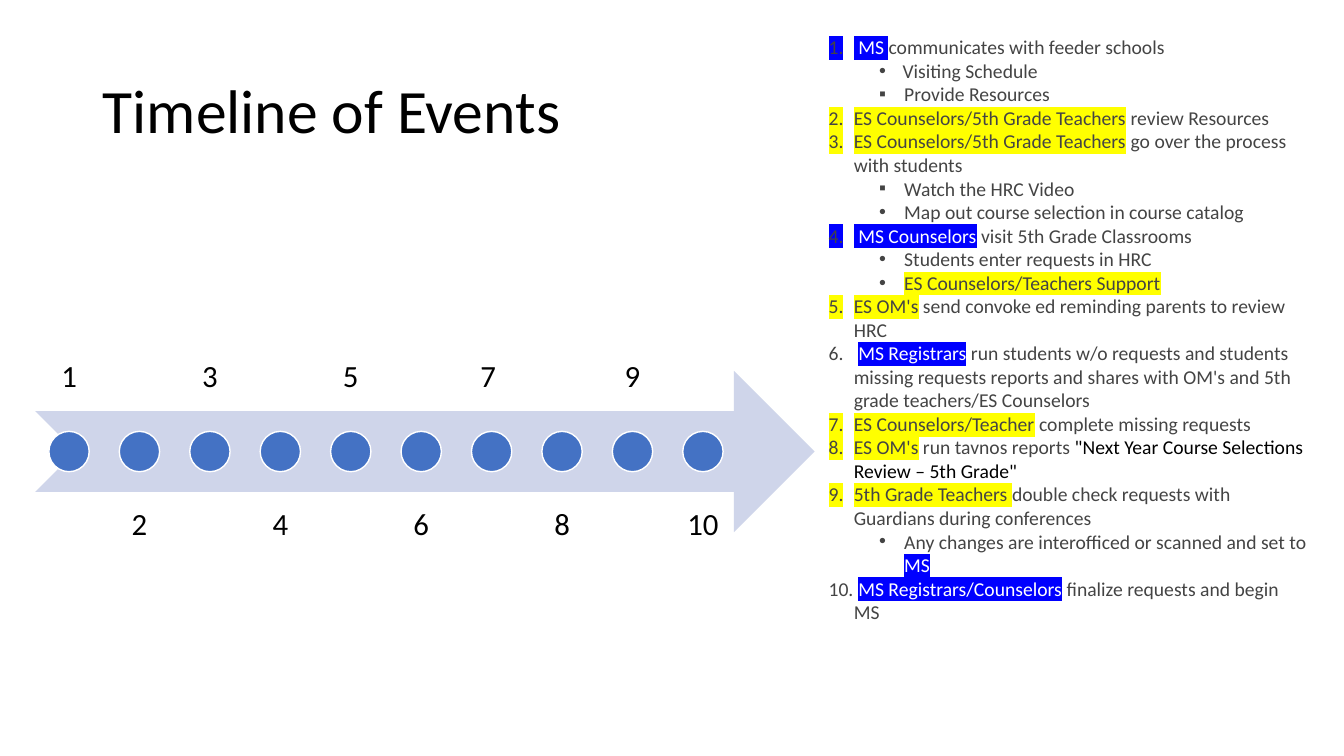
import pptx
import pptx.util
import pptx.dml.color
import pptx.enum.shapes
import pptx.enum.text
import pptx.oxml
import pptx.oxml.ns

Inches = pptx.util.Inches
Pt = pptx.util.Pt
RGBColor = pptx.dml.color.RGBColor
Shape = pptx.enum.shapes.MSO_SHAPE
Anchor = pptx.enum.text.MSO_ANCHOR
Align = pptx.enum.text.PP_ALIGN

BLACK = RGBColor(0x00, 0x00, 0x00)
WHITE = RGBColor(0xFF, 0xFF, 0xFF)
GREY = RGBColor(0x44, 0x44, 0x44)
PALE = RGBColor(0xCF, 0xD5, 0xEA)
BLUE = RGBColor(0x44, 0x72, 0xC4)
VIVID = RGBColor(0x00, 0x00, 0xFF)
YELLOW = RGBColor(0xFF, 0xFF, 0x00)
FONT = "Calibri"

PLAIN = (GREY, None)
DARK = (BLACK, None)
PAD = (GREY, VIVID)
MIDDLE = (WHITE, VIVID)
GRADE = (GREY, YELLOW)

LABELS = ["1", "2", "3", "4", "5", "6", "7 ", "8", "9", "10 "]
STEPS = [
    (0, "", [(" ", PAD), ("MS", MIDDLE), (" ", PAD),
             ("communicates with feeder schools", PLAIN)]),
    (1, "•", [(" Visiting Schedule", PLAIN)]),
    (2, "▪", [("Provide Resources", PLAIN)]),
    (0, "", [("ES Counselors/5th Grade Teachers", GRADE),
             (" review Resources", PLAIN)]),
    (0, "", [("ES Counselors/5th Grade Teachers", GRADE),
             (" go over the process with students", PLAIN)]),
    (2, "▪", [("Watch the HRC Video", PLAIN)]),
    (2, "•", [("Map out course selection in course catalog", PLAIN)]),
    (0, "", [(" ", PAD), ("MS Counselors", MIDDLE),
             (" visit 5th Grade Classrooms", PLAIN)]),
    (2, "•", [("Students enter requests in HRC", PLAIN)]),
    (2, "•", [("ES Counselors/Teachers Support", GRADE)]),
    (0, "", [("ES OM's", GRADE),
             (" send convoke ed reminding parents to review HRC", PLAIN)]),
    (0, "", [(" ", PLAIN), ("MS Registrars", MIDDLE),
             (" run students w/o requests and students missing requests reports "
              "and shares with OM's and 5th grade teachers/ES Counselors", PLAIN)]),
    (0, "", [("ES Counselors/Teacher", GRADE),
             (" complete missing requests ", PLAIN)]),
    (0, "", [("ES OM's", GRADE), (" run tavnos reports ", PLAIN),
             ('"Next Year Course Selections Review – 5th Grade"', DARK)]),
    (0, "", [("5th Grade Teachers ", GRADE),
             ("double check requests with Guardians during conferences", PLAIN)]),
    (1, "•", [("Any changes are interofficed or scanned and set to ", PLAIN),
              ("MS", MIDDLE)]),
    (0, "", [(" ", PLAIN), ("MS Registrars/Counselors", MIDDLE),
             (" finalize requests and begin MS", PLAIN)]),
]


def style(run, size, color, mark=None):
    """Set the font of a run and, if given, its highlight."""
    run.font.name = FONT
    run.font.size = Pt(size)
    run.font.color.rgb = color
    if mark is not None:
        light = pptx.oxml.parse_xml(
            f'<a:highlight {pptx.oxml.ns.nsdecls("a")}>'
            f'<a:srgbClr val="{mark}"/></a:highlight>')
        run._r.get_or_add_rPr().find(pptx.oxml.ns.qn("a:solidFill")).addnext(light)


def bullet(para, sign):
    """Indent a paragraph and give it a sign, or a number when there is none."""
    left, hang = (0.75, 0.25) if sign else (0.25, 0.25)
    if para.level == 1 and para.text.startswith(" "):
        left, hang = 0.69, 0.19
    props = para._p.get_or_add_pPr()
    props.set("marL", str(Inches(left)))
    props.set("indent", str(-Inches(hang)))
    tags = ['buAutoNum type="arabicPeriod"']
    if sign:
        tags = ['buFont typeface="Arial"', f'buChar char="{sign}"']
    for tag in tags:
        props.append(pptx.oxml.parse_xml(
            f'<a:{tag} {pptx.oxml.ns.nsdecls("a")}/>'))


def add_title(slide, left, top, width, height):
    """Place the slide title."""
    title = slide.shapes.title
    title.left, title.top = Inches(left), Inches(top)
    title.width, title.height = Inches(width), Inches(height)
    frame = title.text_frame
    frame.text = "Timeline of Events"
    frame.vertical_anchor = Anchor.MIDDLE
    para = frame.paragraphs[0]
    para.alignment = Align.LEFT
    para.line_spacing = 0.9
    style(para.runs[0], 44, BLACK)


def add_form(group, kind, left, top, width, height, fill):
    """Add a filled shape without shadow or line."""
    form = group.shapes.add_shape(
        kind, Inches(left), Inches(top), Inches(width), Inches(height))
    form.shadow.inherit = False
    form.fill.solid()
    form.fill.fore_color.rgb = fill
    form.line.fill.background()
    return form


def add_label(group, text, left, top, width, height, anchor):
    """Add one number of the timeline."""
    box = group.shapes.add_textbox(
        Inches(left), Inches(top), Inches(width), Inches(height))
    frame = box.text_frame
    frame.word_wrap = True
    frame.vertical_anchor = anchor
    frame.margin_left = frame.margin_right = Inches(0.17)
    frame.margin_top = frame.margin_bottom = Inches(0.17)
    frame.text = text
    para = frame.paragraphs[0]
    para.alignment = Align.CENTER
    para.line_spacing = 0.9
    style(para.runs[0], 22, BLACK)


def add_timeline(slide, left, top, width, height):
    """Draw the arrow with its dots and numbers above and below by turns."""
    group = slide.shapes.add_group_shape()
    band = 0.4 * height
    add_form(group, Shape.NOTCHED_RIGHT_ARROW, left, top + (height - band) / 2,
             width, band, PALE)
    wide, size = 0.67, 0.4
    pitch = (0.9 * width - wide) / (len(LABELS) - 1)
    for num, text in enumerate(LABELS):
        start = left + num * pitch
        if num % 2:
            add_label(group, text, start, top + height - band, wide, band,
                      Anchor.TOP)
        else:
            add_label(group, text, start, top, wide, band, Anchor.BOTTOM)
        dot = add_form(group, Shape.OVAL, start + (wide - size) / 2,
                       top + (height - size) / 2, size, size, BLUE)
        dot.line.color.rgb = WHITE
        dot.line.width = Pt(1)


def add_steps(slide, left, top, width, height):
    """Write the numbered list of steps."""
    box = slide.shapes.add_textbox(
        Inches(left), Inches(top), Inches(width), Inches(height))
    frame = box.text_frame
    frame.word_wrap = True
    frame.auto_size = pptx.enum.text.MSO_AUTO_SIZE.SHAPE_TO_FIT_TEXT
    for num, (level, sign, parts) in enumerate(STEPS):
        para = frame.add_paragraph() if num else frame.paragraphs[0]
        para.level = level
        for text, (color, mark) in parts:
            run = para.add_run()
            run.text = text
            style(run, 14, color, mark)
        bullet(para, sign)


def main():
    """Build and save the slide."""
    deck = pptx.Presentation()
    deck.slide_width, deck.slide_height = Inches(13.33), Inches(7.5)
    slide = deck.slides.add_slide(deck.slide_layouts[5])
    add_title(slide, 0.92, 0.4, 11.5, 1.45)
    add_timeline(slide, 0.35, 2.48, 7.73, 4)
    add_steps(slide, 8.12, 0.3, 4.96, 5.99)
    deck.save("out.pptx")


if __name__ == "__main__":
    main()
